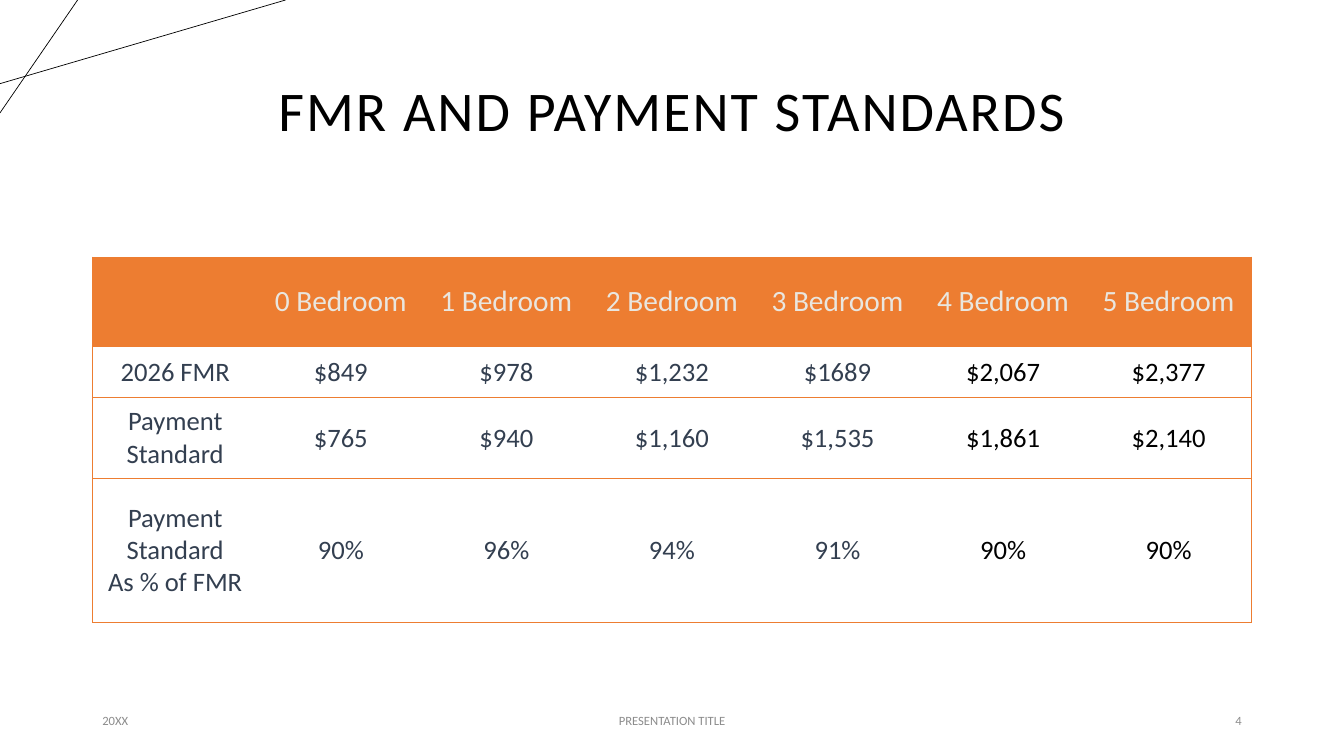
import lxml.etree
import pptx
import pptx.dml.color
import pptx.enum.shapes
import pptx.enum.text
import pptx.oxml.ns
import pptx.util

ALIGN = pptx.enum.text.PP_ALIGN
MIDDLE = pptx.enum.text.MSO_ANCHOR.MIDDLE
COLORS = {
    "black": "000000",
    "grey": "8C8C8C",
    "orange": "ED7D31",
    "cream": "E9E6DF",
    "slate": "333F50",
    "white": "FFFFFF",
}
COLUMNS, ROWS = 160, 150  # grid cells across and down the slide


def rgb(name):
    return pptx.dml.color.RGBColor.from_string(COLORS[name])


def qn(tag):
    return pptx.oxml.ns.qn(tag)


def apply(target, values):
    for name, value in values.items():
        setattr(target, name, value)


class SlideBuilder:
    """Holds the style and the current page; lengths are grid columns and rows."""

    font = "Calibri"
    rule = 0.5
    cell_format = {
        "vertical_anchor": MIDDLE,
        "margin_left": pptx.util.Inches(0.13),
        "margin_right": pptx.util.Inches(0.13),
        "margin_top": pptx.util.Inches(0.07),
        "margin_bottom": pptx.util.Inches(0.07),
    }

    def __init__(self, deck):
        self.deck = deck
        self.page = deck.slides.add_slide(deck.slide_layouts[5])
        self.page.background.fill.solid()
        self.page.background.fill.fore_color.rgb = rgb("white")

    def x(self, columns):
        return round(self.deck.slide_width * columns / COLUMNS)

    def y(self, rows):
        return round(self.deck.slide_height * rows / ROWS)

    def area(self, left, top, width, height):
        return self.x(left), self.y(top), self.x(width), self.y(height)

    def set_text(self, frame, text, size, color, align, **spacing):
        frame.word_wrap = True
        frame.text = text
        for para in frame.paragraphs:
            apply(para, {"alignment": align, **spacing})
            for span in para.runs:
                apply(span.font, {"name": self.font, "size": pptx.util.Pt(size)})
                span.font.color.rgb = rgb(color)

    def line(self, start, end):
        line = self.page.shapes.add_connector(
            pptx.enum.shapes.MSO_CONNECTOR.STRAIGHT,
            self.x(start[0]), self.y(start[1]), self.x(end[0]), self.y(end[1]))
        line.line.color.rgb = rgb("black")
        line.line.width = pptx.util.Pt(self.rule)
        lxml.etree.SubElement(line._element.spPr, qn("a:effectLst"))

    def title(self, text, area):
        box = self.page.shapes.title
        apply(box, dict(zip(("left", "top", "width", "height"), self.area(*area))))
        box.text_frame.vertical_anchor = MIDDLE
        box.text_frame.auto_size = pptx.enum.text.MSO_AUTO_SIZE.NONE
        self.set_text(box.text_frame, text, 40, "black", ALIGN.CENTER, line_spacing=0.9)
        for span in box.text_frame.paragraphs[0].runs:
            span._r.get_or_add_rPr().set("spc", "150")

    def footer(self, text, area, align):
        box = self.page.shapes.add_textbox(*self.area(*area))
        box.text_frame.vertical_anchor = MIDDLE
        self.set_text(box.text_frame, text, 9, "grey", align, space_after=pptx.util.Pt(6))

    def border(self, cell, visible):
        properties = cell._tc.get_or_add_tcPr()
        for side in "LRTB":
            edge = lxml.etree.SubElement(properties, qn(f"a:ln{side}"))
            if side in visible:
                edge.set("w", str(pptx.util.Pt(self.rule)))
                fill = lxml.etree.SubElement(edge, qn("a:solidFill"))
                lxml.etree.SubElement(fill, qn("a:srgbClr"), val=COLORS["orange"])
            else:
                edge.set("w", "0")
                lxml.etree.SubElement(edge, qn("a:noFill"))

    def table(self, data, area, heights):
        count = len(data[0])
        frame = self.page.shapes.add_table(len(data), count, *self.area(*area))
        table = frame.table
        apply(table, {"first_row": False, "horz_banding": False})
        for column in table.columns:
            column.width = self.x(area[2] / count)
        for r, (values, height) in enumerate(zip(data, heights)):
            table.rows[r].height = self.y(height)
            for c, text in enumerate(values):
                cell = table.cell(r, c)
                apply(cell, self.cell_format)
                sides = "TB" + "L" * (c == 0) + "R" * (c == count - 1)
                self.border(cell, sides)
                if r == 0:
                    cell.fill.solid()
                    cell.fill.fore_color.rgb = rgb("orange")
                    size, color = 21, "cream"
                else:
                    cell.fill.background()
                    size, color = 19, "slate" if c < count - 2 else "black"
                self.set_text(cell.text_frame, text, size, color, ALIGN.CENTER)


def main():
    deck = pptx.Presentation()
    deck.slide_width = pptx.util.Inches(13.33)
    deck.slide_height = pptx.util.Inches(7.5)
    builder = SlideBuilder(deck)

    # Corner lines
    builder.line((0, 16.6), (34, 0))
    builder.line((9.24, 0), (0, 22.4))

    # Title
    builder.title("FMR AND PAYMENT STANDARDS", (11, 8, 138, 29))

    # Footer
    for text, left, width, align in (
        ("20XX", 11, 36, ALIGN.LEFT),
        ("PRESENTATION TITLE", 53, 54, ALIGN.CENTER),
        ("4", 113, 36, ALIGN.RIGHT),
    ):
        builder.footer(text, (left, 139, width, 8), align)

    # Rent table
    data = [
        [""] + [f"{rooms} Bedroom" for rooms in range(6)],
        ["2026 FMR", "$849", "$978", "$1,232", "$1689", "$2,067", "$2,377"],
        ["Payment Standard", "$765", "$940", "$1,160", "$1,535", "$1,861", "$2,140"],
        ["Payment Standard\nAs % of FMR", "90%", "96%", "94%", "91%", "90%", "90%"],
    ]
    builder.table(data, (11, 51, 138, 72.4), (17.8, 10, 16.2, 28.4))

    deck.save("out.pptx")


if __name__ == "__main__":
    main()
